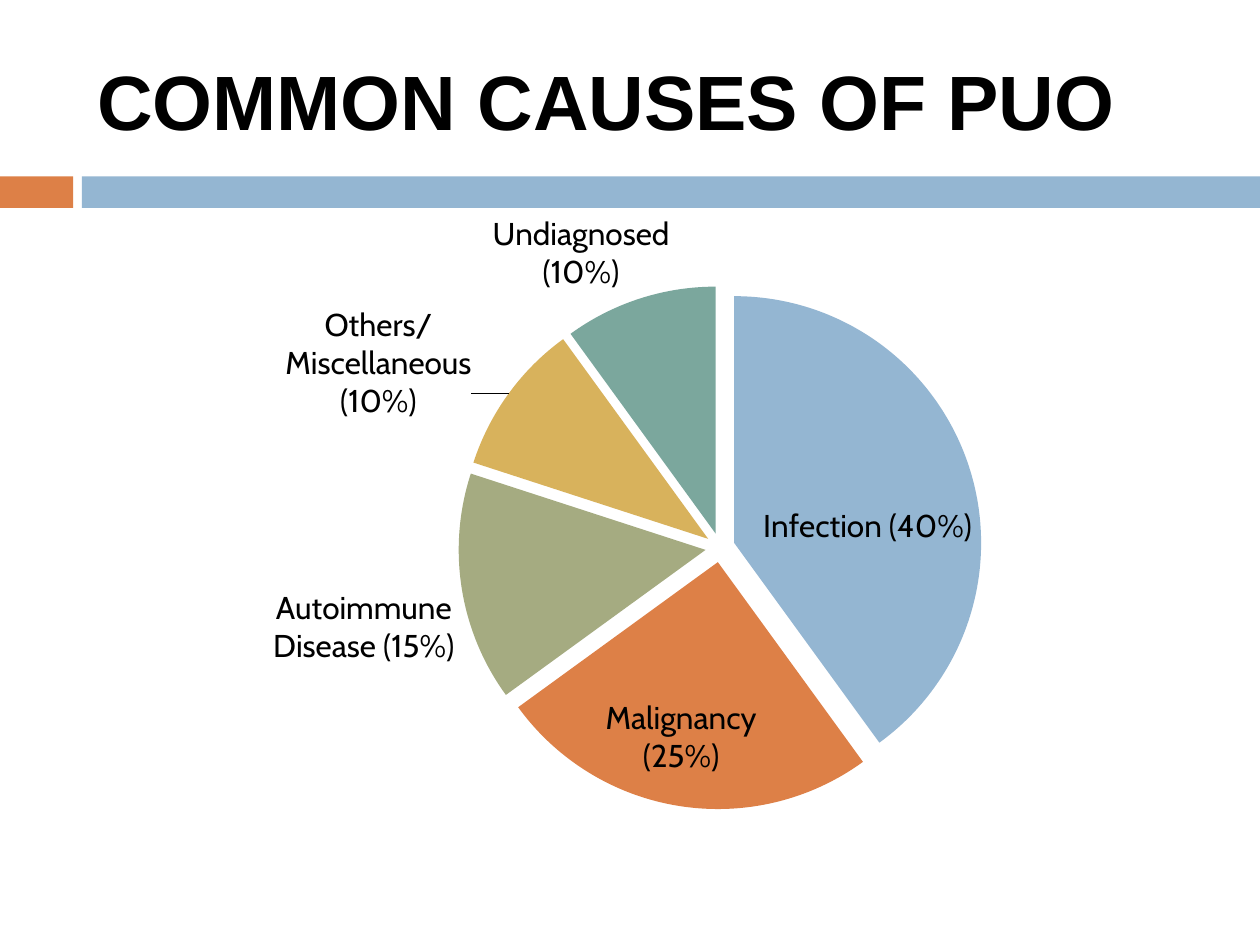
from lxml.etree import SubElement
from pptx import Presentation
from pptx.chart.data import CategoryChartData
from pptx.dml.color import RGBColor
from pptx.enum.chart import XL_CHART_TYPE, XL_LABEL_POSITION
from pptx.enum.shapes import MSO_SHAPE
from pptx.enum.text import MSO_ANCHOR, PP_ALIGN
from pptx.oxml import parse_xml
from pptx.oxml.ns import nsdecls, qn
from pptx.util import Inches, Pt

BLACK = RGBColor(0x00, 0x00, 0x00)
BLUE = RGBColor(0x94, 0xB6, 0xD2)
ORANGE = RGBColor(0xDD, 0x80, 0x47)
OLIVE = RGBColor(0xA5, 0xAB, 0x81)
GOLD = RGBColor(0xD8, 0xB2, 0x5C)
TEAL = RGBColor(0x7B, 0xA7, 0x9D)

TITLE = "COMMON CAUSES OF PUO"
CAUSES = [
    ("Infection (40%)", 40, BLUE),
    ("Malignancy (25%)", 25, ORANGE),
    ("Autoimmune Disease (15%)", 15, OLIVE),
    ("Others/ Miscellaneous (10%)", 10, GOLD),
    ("Undiagnosed (10%)", 10, TEAL),
]
EXPLOSION = 6
SLIDE_WIDTH, SLIDE_HEIGHT = 10, 7.5
BAND_TOP, BAND_HEIGHT = 1.4, 0.25
BANDS = [(0, 0.58, ORANGE), (0.65, SLIDE_WIDTH - 0.65, BLUE)]
TITLE_BOX = (0.67, 0.25, 8.92, 1.08)
CHART_BOX = (0.51, 1.53, 8.9, 5.69)
PIE_SHARE = {"x": 0.35, "y": 0.13, "w": 0.47, "h": 0.73}
TITLE_FONT = {"name": "Arial", "size": Pt(44), "bold": True}
LABEL_FONT = {"name": "Cabin", "size": Pt(18), "bold": False}


def set_font(font, values):
    """Apply a dict of font values in black."""
    for name, value in values.items():
        setattr(font, name, value)
    font.color.rgb = BLACK


def add_bands(slide):
    """Draw the two-part divider under the title."""
    for left, width, color in BANDS:
        band = slide.shapes.add_shape(
            MSO_SHAPE.RECTANGLE, *map(Inches, (left, BAND_TOP, width, BAND_HEIGHT)))
        band.shadow.inherit = False
        band.fill.solid()
        band.fill.fore_color.rgb = color
        band.line.fill.background()


def add_title(slide):
    """Fill and format the title placeholder."""
    title = slide.shapes.title
    title.left, title.top, title.width, title.height = map(Inches, TITLE_BOX)
    frame = title.text_frame
    frame.text = TITLE
    frame.vertical_anchor = MSO_ANCHOR.MIDDLE
    paragraph = frame.paragraphs[0]
    paragraph.alignment = PP_ALIGN.LEFT
    set_font(paragraph.runs[0].font, TITLE_FONT)


def place_pie(chart):
    """Fix the pie's place as shares of the chart."""
    plot_area = chart.plots[0]._element.getparent()
    for old_layout in plot_area.findall(qn("c:layout")):
        plot_area.remove(old_layout)
    layout = parse_xml(f"<c:layout {nsdecls('c')}><c:manualLayout/></c:layout>")
    settings = {"layoutTarget": "inner", "xMode": "edge", "yMode": "edge", **PIE_SHARE}
    for name, value in settings.items():
        SubElement(layout[0], qn(f"c:{name}")).set("val", str(value))
    plot_area.insert(0, layout)


def add_pie(slide):
    """Add the exploded pie with category labels."""
    data = CategoryChartData()
    data.categories = [name for name, _, _ in CAUSES]
    data.add_series("Series 1", [value for _, value, _ in CAUSES])
    chart = slide.shapes.add_chart(
        XL_CHART_TYPE.PIE, *map(Inches, CHART_BOX), data).chart
    chart.has_title = False
    chart.has_legend = False
    set_font(chart.font, LABEL_FONT)
    plot = chart.plots[0]
    plot.vary_by_categories = True
    series = plot.series[0]
    for index, (_, _, color) in enumerate(CAUSES):
        fill = series.points[index].format.fill
        fill.solid()
        fill.fore_color.rgb = color
    explosion = parse_xml(f'<c:explosion {nsdecls("c")} val="{EXPLOSION}"/>')
    series._element.find(qn("c:dPt")).addprevious(explosion)
    for point in series._element.findall(qn("c:dPt")):
        point.find(qn("c:spPr")).addprevious(
            parse_xml(f'<c:explosion {nsdecls("c")} val="{EXPLOSION}"/>'))
    labels = series.data_labels
    labels.show_category_name = True
    labels.show_value = False
    labels.show_percentage = False
    labels.position = XL_LABEL_POSITION.BEST_FIT
    set_font(labels.font, LABEL_FONT)
    place_pie(chart)


def main():
    """Build and save the slide."""
    presentation = Presentation()
    presentation.slide_width = Inches(SLIDE_WIDTH)
    presentation.slide_height = Inches(SLIDE_HEIGHT)
    slide = presentation.slides.add_slide(presentation.slide_layouts[5])
    add_bands(slide)
    add_title(slide)
    add_pie(slide)
    presentation.save("out.pptx")


if __name__ == "__main__":
    main()
